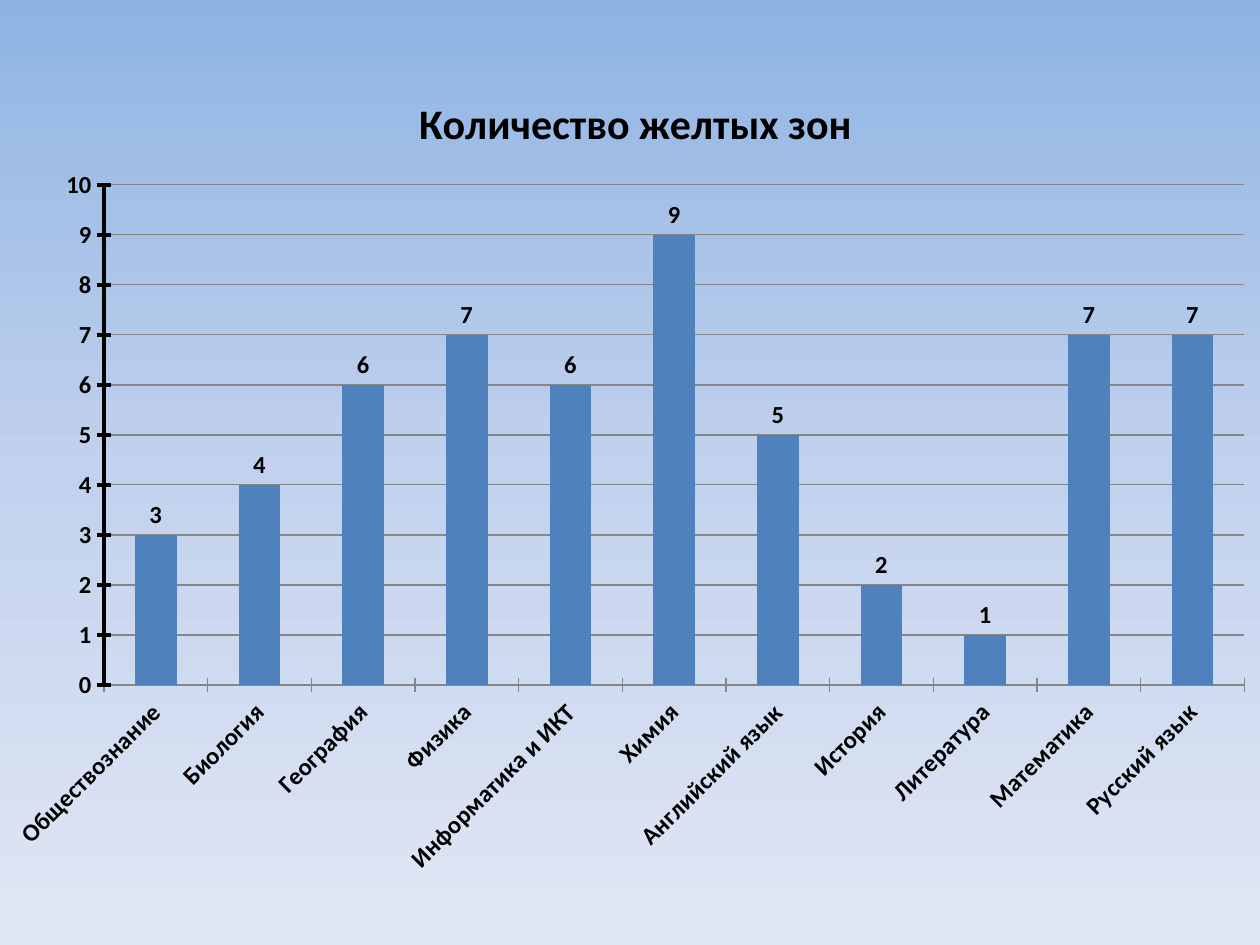
"""Builds a one-slide deck with a column chart of yellow zones by subject."""
from copy import deepcopy

from lxml import etree
from pptx import Presentation
from pptx import util as u
from pptx.chart.data import CategoryChartData
from pptx.dml.color import RGBColor
from pptx.enum import chart as kinds
from pptx.oxml import ns

BLACK = RGBColor(0x00, 0x00, 0x00)
GRID = RGBColor(0x86, 0x86, 0x86)
COLUMN = RGBColor(0x4F, 0x81, 0xBD)
SKY = [
    (0, RGBColor(0x8E, 0xB4, 0xE3)),
    (0.5, RGBColor(0xC2, 0xD1, 0xED)),
    (1, RGBColor(0xE1, 0xE8, 0xF5)),
]
TITLE = "Количество желтых зон"
ZONES = {
    "Обществознание": 3,
    "Биология": 4,
    "География": 6,
    "Физика": 7,
    "Информатика и ИКТ": 6,
    "Химия": 9,
    "Английский язык": 5,
    "История": 2,
    "Литература": 1,
    "Математика": 7,
    "Русский язык": 7,
}


class SlideBuilder:
    def __init__(self, page, font="Calibri", size=14):
        self.page, self.font, self.size = page, font, size

    def style(self, font, size=None):
        font.name = self.font
        font.size = u.Pt(size or self.size)
        font.bold = True
        font.color.rgb = BLACK

    def background(self, colours):
        fill = self.page.background.fill
        fill.gradient()
        fill.gradient_angle = 270
        stop_list = self.page.element.find(".//" + ns.qn("a:gsLst"))
        while len(stop_list) < len(colours):
            stop_list.append(deepcopy(stop_list[0]))
        for stop, (position, colour) in zip(fill.gradient_stops, colours):
            stop.position = position
            stop.color.rgb = colour

    def place(self, owner, index, **settings):
        for old in owner.findall(ns.qn("c:layout")):
            owner.remove(old)
        layout = etree.Element(ns.qn("c:layout"))
        manual = etree.SubElement(layout, ns.qn("c:manualLayout"))
        for tag, value in settings.items():
            etree.SubElement(manual, ns.qn("c:" + tag)).set("val", str(value))
        owner.insert(index, layout)

    def column_chart(self, title, values, left, top, width, height):
        data = CategoryChartData(number_format="0")
        data.categories = list(values)
        data.add_series(title, list(values.values()))
        chart = self.page.shapes.add_chart(
            kinds.XL_CHART_TYPE.COLUMN_CLUSTERED, u.Inches(left), u.Inches(top),
            u.Inches(width), u.Inches(height), data).chart
        self.style(chart.font)
        chart.has_legend = False
        self.title(chart, title)
        self.axes(chart)
        self.columns(chart.plots[0])
        plot_area = chart.element.find(".//" + ns.qn("c:plotArea"))
        self.place(plot_area, 0, layoutTarget="inner", xMode="edge", yMode="edge",
                   x=0.09, y=0.156, w=0.89, h=0.597)

    def title(self, chart, words):
        chart.has_title = True
        para = chart.chart_title.text_frame.paragraphs[0]
        span = para.add_run()
        span.text = words
        self.style(span.font, 24)
        chart.chart_title.include_in_layout = False
        self.place(chart.chart_title.element if hasattr(chart.chart_title, "element")
                   else chart.element.find(".//" + ns.qn("c:title")), 1,
                   xMode="edge", yMode="edge", x=0.33, y=0.04)

    def axes(self, chart):
        subjects, counts = chart.category_axis, chart.value_axis
        for axis in (subjects, counts):
            axis.major_tick_mark = kinds.XL_TICK_MARK.CROSS
            axis.minor_tick_mark = kinds.XL_TICK_MARK.NONE
            self.style(axis.tick_labels.font)
        subjects.format.line.color.rgb = GRID
        turned = subjects.tick_labels.font
        subjects.element_rotation = None if turned is None else -45
        body = chart.element.find(".//" + ns.qn("c:catAx")).find(
            ns.qn("c:txPr") + "/" + ns.qn("a:bodyPr"))
        body.set("rot", "-2700000")
        body.set("vert", "horz")
        counts.minimum_scale, counts.maximum_scale, counts.major_unit = 0, 10, 1
        counts.tick_labels.number_format = "0"
        counts.tick_labels.number_format_is_linked = False
        counts.format.line.color.rgb = BLACK
        counts.format.line.width = u.Pt(2)
        counts.has_major_gridlines = True
        counts.major_gridlines.format.line.color.rgb = GRID

    def columns(self, plot):
        plot.gap_width = 150
        plot.vary_by_categories = False
        fill = plot.series[0].format.fill
        fill.solid()
        fill.fore_color.rgb = COLUMN
        labels = plot.series[0].data_labels
        labels.show_value = True
        labels.number_format = "0"
        labels.number_format_is_linked = False
        labels.position = kinds.XL_LABEL_POSITION.OUTSIDE_END
        self.style(labels.font)


def main():
    deck = Presentation()
    deck.slide_width, deck.slide_height = u.Inches(10), u.Inches(7.5)
    builder = SlideBuilder(deck.slides.add_slide(deck.slide_layouts[6]))
    builder.background(SKY)
    builder.column_chart(TITLE, ZONES, -0.09, 0.43, 10.17, 6.65)
    deck.save("out.pptx")


if __name__ == "__main__":
    main()
